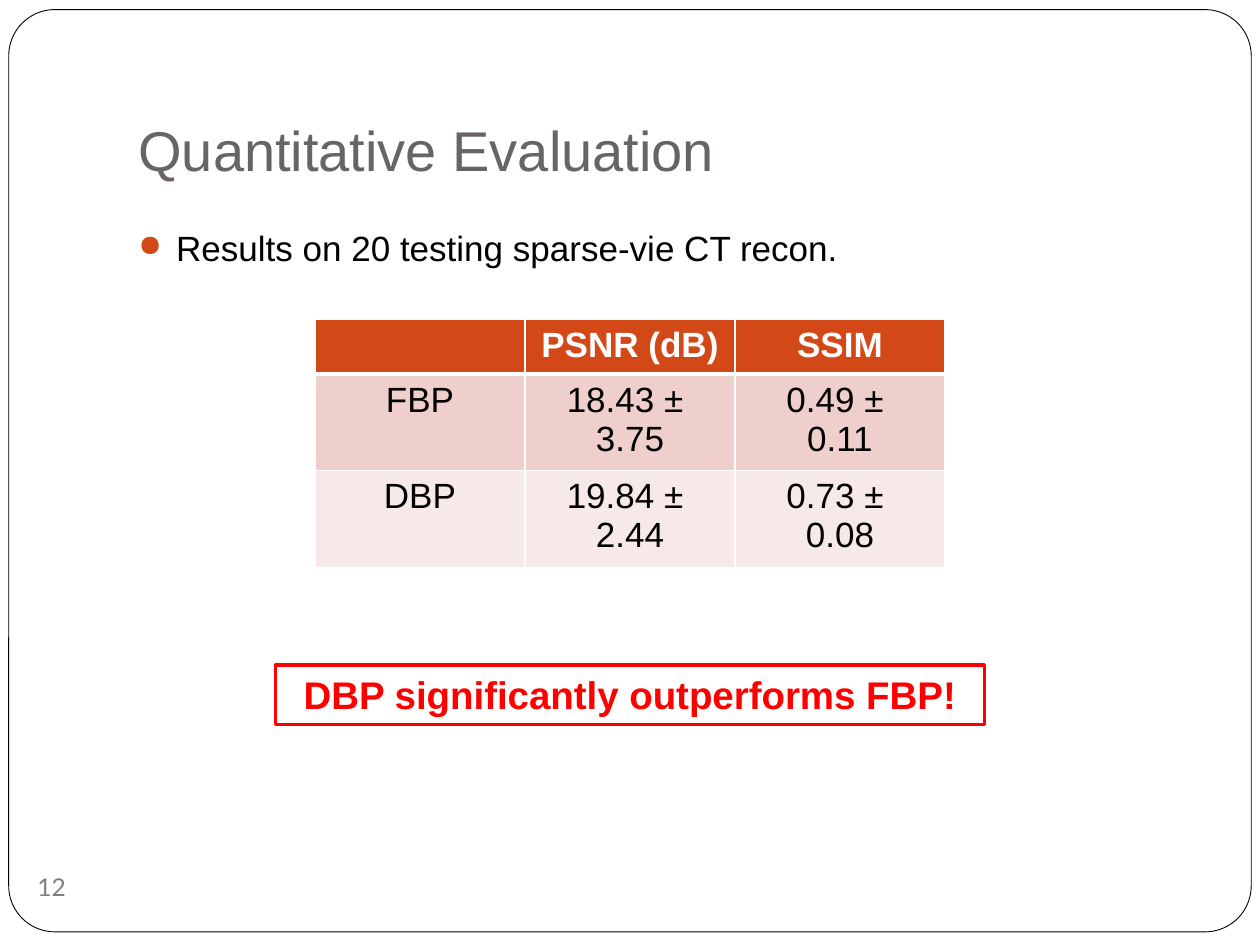
"""Build the slide on quantitative evaluation of FBP and DBP."""
from dataclasses import dataclass

from lxml import etree
from pptx import Presentation
from pptx.dml.color import RGBColor as Rgb
from pptx.enum import shapes, text
from pptx.oxml import ns
from pptx.util import Pt


@dataclass
class Theme:
    face: str = "Arial"
    mark: str = "Lato"
    ink: str = "000000"
    paper: str = "FFFFFF"
    title: str = "696464"
    grey: str = "808080"
    accent: str = "D34817"
    alert: str = "FF0000"
    bands: tuple = ("D34817", "EFCFCC", "F7E9E8")
    head: int = 32
    body: int = 20
    claim: int = 22
    page: int = 14


def add(parent, tag, **attrs):
    return etree.SubElement(parent, ns.qn(tag), attrs)


def write(frame, words, size, color, bold=False, face=Theme.face, align=text.PP_ALIGN.CENTER):
    frame.text = words
    for para in frame.paragraphs:
        para.alignment = align
        font = para.font
        font.name, font.size, font.bold = face, Pt(size), bold
        font.color.rgb = Rgb.from_string(color)


look = Theme()
left = text.PP_ALIGN.LEFT
kinds = shapes.MSO_SHAPE
deck = Presentation()
deck.slide_width, deck.slide_height = Pt(720), Pt(540)
slide = deck.slides.add_slide(deck.slide_layouts[6])
items = slide.shapes

border = items.add_shape(kinds.ROUNDED_RECTANGLE, Pt(5), Pt(5.5), Pt(710), Pt(527))
border.adjustments[0] = 0.05
border.shadow.inherit = False
border.fill.solid()
border.fill.fore_color.rgb = Rgb.from_string(look.paper)
border.line.color.rgb = Rgb.from_string(look.ink)
border.line.width = Pt(0.5)

title = items.add_textbox(Pt(72), Pt(21.6), Pt(642), Pt(90)).text_frame
title.word_wrap = True
title.vertical_anchor = text.MSO_ANCHOR.BOTTOM
title.margin_bottom = Pt(7.2)
write(title, "Quantitative Evaluation", look.head, look.title, align=left)

page = items.add_shape(kinds.OVAL, Pt(11.5), Pt(489), Pt(36), Pt(36))
page.shadow.inherit = False
page.fill.background()
page.line.fill.background()
frame = page.text_frame
frame.margin_left = frame.margin_right = frame.margin_top = frame.margin_bottom = 0
frame.word_wrap = False
frame.vertical_anchor = text.MSO_ANCHOR.MIDDLE
write(frame, "12", look.page, look.grey, face=look.mark)

body = items.add_textbox(Pt(72), Pt(126), Pt(612), Pt(390)).text_frame
body.word_wrap = True
write(body, "Results on 20 testing sparse-vie CT recon.", look.body, look.ink, align=left)
point = body.paragraphs[0]
point.space_before = Pt(5.8)
props = point._p.get_or_add_pPr()
props.set("marL", str(Pt(21.6)))
props.set("indent", str(-Pt(21.6)))
bullet = [etree.Element(ns.qn(tag)) for tag in ("a:buClr", "a:buSzPct", "a:buChar")]
add(bullet[0], "a:srgbClr", val=look.accent)
bullet[1].set("val", "85000")
bullet[2].set("char", "●")
for node in bullet:
    props.find(ns.qn("a:defRPr")).addprevious(node)

rows = [
    ("", "PSNR (dB)", "SSIM"),
    ("FBP", "18.43 ± \n3.75", "0.49 ± \n0.11"),
    ("DBP", "19.84 ± \n2.44", "0.73 ± \n0.08"),
]
grid = items.add_table(3, 3, Pt(180), Pt(182.5), Pt(360), Pt(133.5)).table
for col in grid.columns:
    col.width = Pt(120)
for r, row in enumerate(rows):
    top = r == 0
    grid.rows[r].height = Pt(29.5 if top else 52)
    for c, words in enumerate(row):
        cell = grid.cell(r, c)
        write(cell.text_frame, words, look.body, look.paper if top else look.ink, top)
        props = cell._tc.get_or_add_tcPr()
        for side in "LRTB":
            thick = 3 if (r, side) in ((0, "B"), (1, "T")) else 1
            edge = add(props, f"a:ln{side}", w=str(Pt(thick)))
            add(add(edge, "a:solidFill"), "a:srgbClr", val=look.paper)
        cell.fill.solid()
        cell.fill.fore_color.rgb = Rgb.from_string(look.bands[r])

claim = items.add_shape(kinds.RECTANGLE, Pt(157.5), Pt(380), Pt(405), Pt(34))
claim.shadow.inherit = False
claim.fill.background()
claim.line.color.rgb = Rgb.from_string(look.alert)
claim.line.width = Pt(2)
frame = claim.text_frame
frame.word_wrap = True
frame.vertical_anchor = text.MSO_ANCHOR.TOP
frame.auto_size = text.MSO_AUTO_SIZE.SHAPE_TO_FIT_TEXT
write(frame, "DBP significantly outperforms FBP!", look.claim, look.alert, True)

deck.save("out.pptx")
